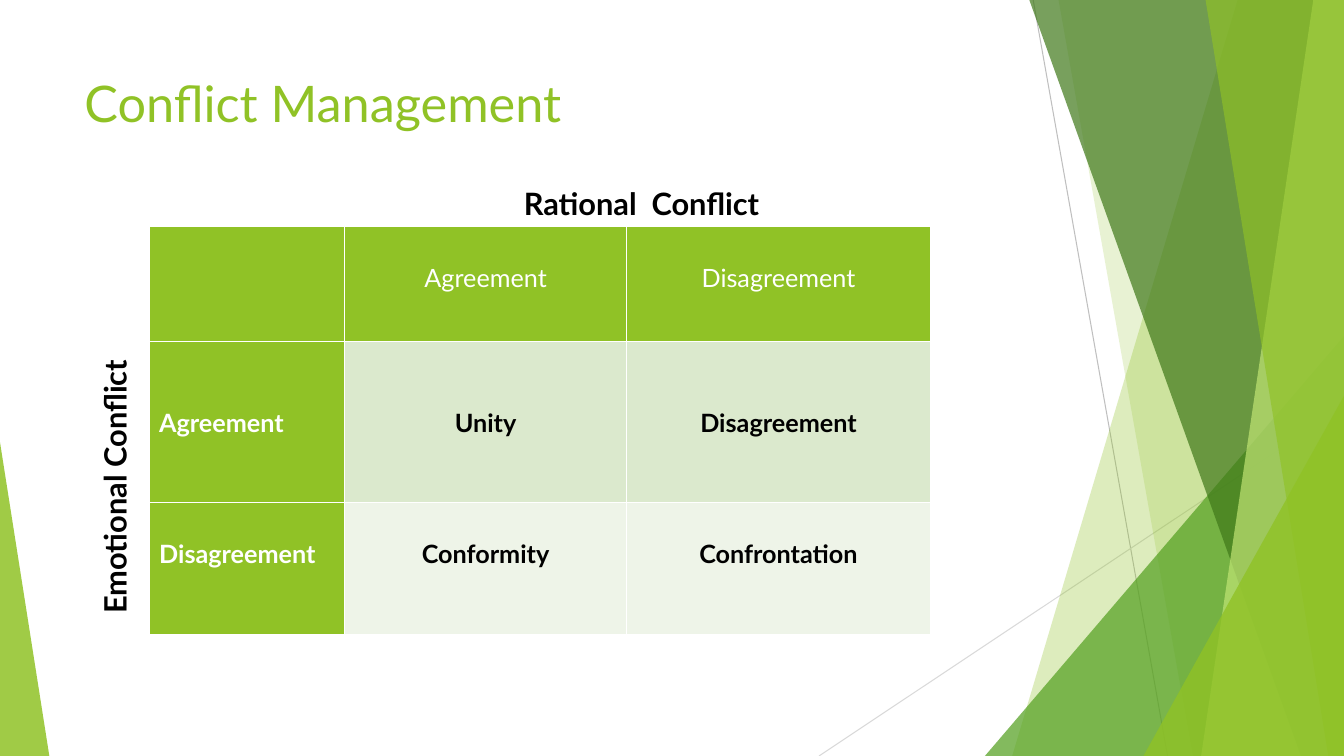
from dataclasses import dataclass

from lxml import etree
from pptx import Presentation
from pptx.dml.color import RGBColor
from pptx.enum.shapes import MSO_CONNECTOR, MSO_SHAPE
from pptx.enum.text import MSO_ANCHOR, PP_ALIGN
from pptx.oxml.ns import qn
from pptx.shapes.autoshape import Shape
from pptx.slide import Slide
from pptx.table import _Cell
from pptx.text.text import _Paragraph
from pptx.util import Emu, Pt

STRAIGHT = MSO_CONNECTOR.STRAIGHT
TRIANGLE = MSO_SHAPE.ISOSCELES_TRIANGLE
LEFT, CENTER = PP_ALIGN.LEFT, PP_ALIGN.CENTER
TOP = MSO_ANCHOR.TOP

PX = 9525
WIDTH, HEIGHT = 1280, 720
FONT = "Lato"

BLACK = RGBColor(0x00, 0x00, 0x00)
WHITE = RGBColor(0xFF, 0xFF, 0xFF)
LIME = RGBColor(0x90, 0xC2, 0x26)
PALE_LIME = RGBColor(0xC0, 0xE4, 0x74)
GREEN = RGBColor(0x54, 0xA0, 0x21)
DARK_GREEN = RGBColor(0x3F, 0x78, 0x19)
BAND_DARK = RGBColor(0xDB, 0xE9, 0xCD)
BAND_LIGHT = RGBColor(0xEE, 0xF4, 0xE8)
GRAY = RGBColor(0xBF, 0xBF, 0xBF)
LIGHT_GRAY = RGBColor(0xD9, 0xD9, 0xD9)


@dataclass(frozen=True)
class Ray:
    x1: int
    y1: int
    x2: int
    y2: int
    color: RGBColor


@dataclass(frozen=True)
class Facet:
    top_x: int
    bottom_x: int
    color: RGBColor
    opacity: int


@dataclass(frozen=True)
class Wedge:
    left: int
    top: int
    width: int
    apex: int
    color: RGBColor
    opacity: int


@dataclass(frozen=True)
class Label:
    text: str
    left: int
    top: int
    width: int
    height: int
    size: int
    color: RGBColor
    bold: bool
    align: PP_ALIGN
    rotation: int = 0


@dataclass(frozen=True)
class Row:
    height: int
    text_top: int
    texts: tuple[str, str, str]
    fill: RGBColor
    color: RGBColor
    bold: bool


RAYS = [
    Ray(984, 0, 1112, 720, GRAY),
    Ray(1280, 387, 780, 720, LIGHT_GRAY),
]
DECORATION = [
    Facet(1179, 964, LIME, 30),
    Facet(1008, 1136, LIME, 20),
    Wedge(938, 320, 342, 1, GREEN, 72),
    Facet(980, 1239, DARK_GREEN, 70),
    Facet(1251, 1144, PALE_LIME, 70),
    Facet(1148, 1265, LIME, 65),
    Wedge(1089, 377, 191, 1, LIME, 80),
    Wedge(0, 421, 47, 0, LIME, 85),
]
LABELS = [
    Label("Conflict Management", 71, 64, 902, 138, 36, LIME, False, LEFT),
    Label("Rational  Conflict", 439, 171, 344, 45, 22, BLACK, True, CENTER),
    Label("Emotional Conflict", -63, 441, 344, 45, 22, BLACK, True, CENTER, 270),
]
TABLE_LEFT, TABLE_TOP = 142, 216
COLUMNS = [186, 269, 289]
ROWS = [
    Row(109, 34, ("", "Agreement", "Disagreement"), LIME, WHITE, False),
    Row(154, 63, ("Agreement", "Unity", "Disagreement"), BAND_DARK, BLACK, True),
    Row(125, 34, ("Disagreement", "Conformity", "Confrontation"), BAND_LIGHT, BLACK, True),
]


def px(value: int) -> Emu:
    return Emu(value * PX)


def style_paragraph(p: _Paragraph, size: int, color: RGBColor, bold: bool, align: PP_ALIGN) -> None:
    p.alignment = align
    p.font.name = FONT
    p.font.size = Pt(size)
    p.font.bold = bold
    p.font.color.rgb = color


def add_ray(slide: Slide, ray: Ray) -> None:
    line = slide.shapes.add_connector(STRAIGHT, px(ray.x1), px(ray.y1), px(ray.x2), px(ray.y2))
    line.line.color.rgb = ray.color
    line.line.width = Pt(0.75)
    etree.SubElement(line.element.spPr, qn("a:effectLst"))


def paint(sp: Shape, color: RGBColor, opacity: int) -> None:
    sp.shadow.inherit = False
    sp.line.fill.background()
    sp.fill.solid()
    sp.fill.fore_color.rgb = color
    clr = sp.element.spPr.find(qn("a:solidFill")).find(qn("a:srgbClr"))
    etree.SubElement(clr, qn("a:alpha")).set("val", str(opacity * 1000))


def add_decoration(slide: Slide, item: Facet | Wedge) -> None:
    if isinstance(item, Facet):
        builder = slide.shapes.build_freeform(item.top_x, -1, scale=PX)
        builder.add_line_segments([(WIDTH, -1), (WIDTH, HEIGHT), (item.bottom_x, HEIGHT)])
        sp = builder.convert_to_shape()
    else:
        sp = slide.shapes.add_shape(
            TRIANGLE, px(item.left), px(item.top), px(item.width), px(HEIGHT - item.top)
        )
        sp.adjustments[0] = item.apex
    paint(sp, item.color, item.opacity)


def add_label(slide: Slide, label: Label) -> None:
    sp = slide.shapes.add_textbox(px(label.left), px(label.top), px(label.width), px(label.height))
    sp.rotation = label.rotation
    tf = sp.text_frame
    tf.word_wrap = True
    tf.vertical_anchor = TOP
    p = tf.paragraphs[0]
    p.text = label.text
    style_paragraph(p, label.size, label.color, label.bold, label.align)


def add_borders(cell: _Cell) -> None:
    tc_pr = cell._tc.get_or_add_tcPr()
    for i, side in enumerate(("lnL", "lnR", "lnT", "lnB")):
        ln = etree.Element(qn(f"a:{side}"), w=str(Pt(1)))
        fill = etree.SubElement(ln, qn("a:solidFill"))
        etree.SubElement(fill, qn("a:srgbClr")).set("val", str(WHITE))
        tc_pr.insert(i, ln)


def add_matrix(slide: Slide) -> None:
    frame = slide.shapes.add_table(
        len(ROWS), len(COLUMNS), px(TABLE_LEFT), px(TABLE_TOP),
        px(sum(COLUMNS)), px(sum(row.height for row in ROWS)),
    )
    table = frame.table
    table.horz_banding = False
    for column, width in zip(table.columns, COLUMNS):
        column.width = px(width)
    for r, row in enumerate(ROWS):
        table.rows[r].height = px(row.height)
        for c, text in enumerate(row.texts):
            cell = table.cell(r, c)
            cell.fill.solid()
            cell.fill.fore_color.rgb = row.fill if c else LIME
            cell.margin_top = px(row.text_top)
            cell.vertical_anchor = TOP
            p = cell.text_frame.paragraphs[0]
            p.text = text
            style_paragraph(p, 18, row.color if c else WHITE, row.bold, CENTER if c else LEFT)
            add_borders(cell)


def main() -> None:
    prs = Presentation()
    prs.slide_width, prs.slide_height = px(WIDTH), px(HEIGHT)
    slide = prs.slides.add_slide(prs.slide_layouts[6])
    for ray in RAYS:
        add_ray(slide, ray)
    for item in DECORATION:
        add_decoration(slide, item)
    add_matrix(slide)
    for label in LABELS:
        add_label(slide, label)
    prs.save("out.pptx")


if __name__ == "__main__":
    main()
